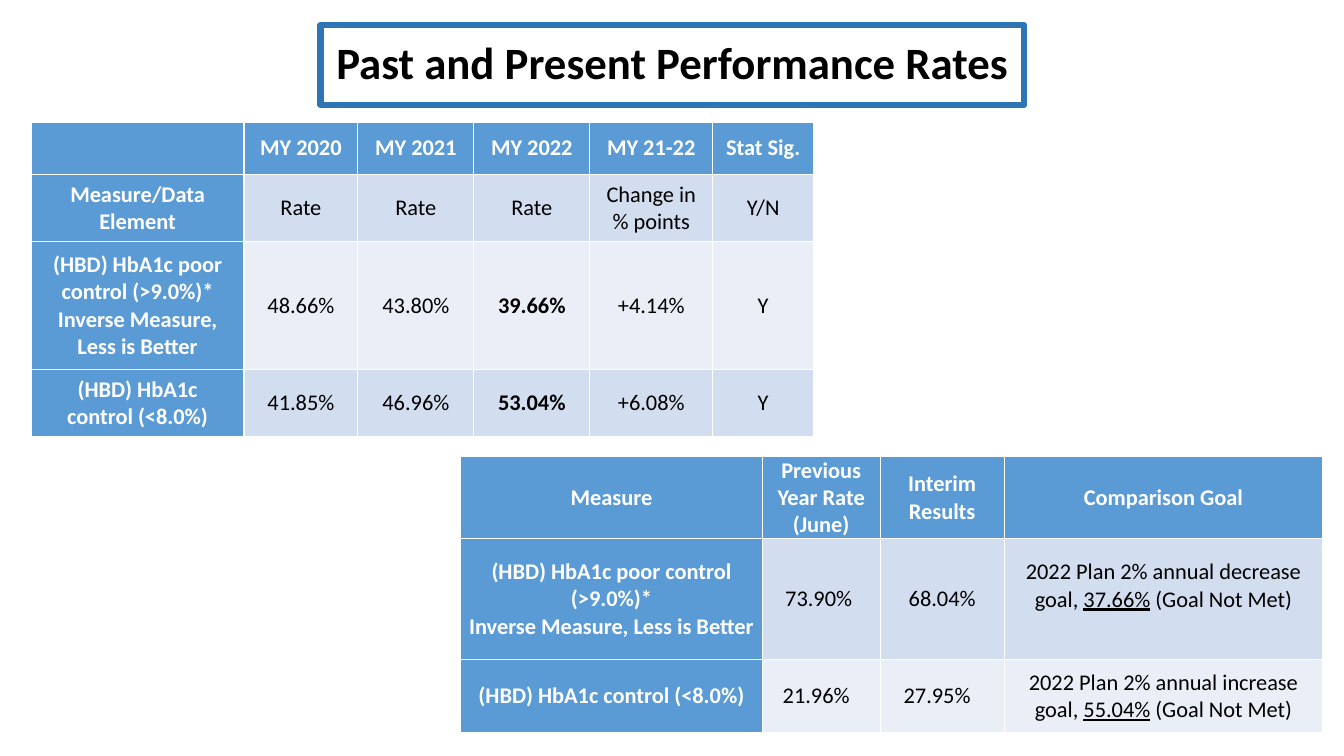
from pptx import Presentation
from pptx.dml.color import RGBColor
from pptx.enum.text import MSO_ANCHOR, MSO_AUTO_SIZE, PP_ALIGN
from pptx.util import Pt

PX = 9144  # 100 px to the inch
CENTER = PP_ALIGN.CENTER
MIDDLE = MSO_ANCHOR.MIDDLE
NO_AUTOFIT = MSO_AUTO_SIZE.NONE

FONT = "Calibri"
BLACK = RGBColor(0x00, 0x00, 0x00)
WHITE = RGBColor(0xFF, 0xFF, 0xFF)
FRAME_BLUE = RGBColor(0x2E, 0x75, 0xB6)
HEADER_BLUE = RGBColor(0x5B, 0x9B, 0xD5)
BANDS = (RGBColor(0xD2, 0xDE, 0xEF), RGBColor(0xEA, 0xEF, 0xF7))

# A cell is a text, or a list of (text, style) runs; "b" is bold, "u" underlined.
YEARLY_RATES = [
    ["", "MY 2020", "MY 2021", "MY 2022", "MY 21-22", "Stat Sig."],
    ["Measure/Data Element", "Rate", "Rate", "Rate", "Change in % points", "Y/N"],
    ["(HBD) HbA1c poor control (>9.0%)*\nInverse Measure, Less is Better",
     "48.66%", "43.80%", [("39.66%", "b")], "+4.14%", "Y"],
    ["(HBD) HbA1c control (<8.0%)",
     "41.85%", "46.96%", [("53.04%", "b")], "+6.08%", "Y"],
]
INTERIM_RESULTS = [
    ["Measure", "Previous Year Rate (June)", "Interim Results", "Comparison Goal"],
    ["(HBD) HbA1c poor control (>9.0%)*\nInverse Measure, Less is Better",
     "73.90%", "68.04%",
     [("2022 Plan 2% annual decrease goal, ", ""), ("37.66%", "u"),
      (" (Goal Not Met)", "")]],
    ["(HBD) HbA1c control (<8.0%)", "21.96%", "27.95%",
     [("2022 Plan 2% annual increase goal, ", ""), ("55.04%", "u"),
      (" (Goal Not Met)", "")]],
]


def add_run(paragraph, text, size, color, bold=False, underline=False):
    run = paragraph.add_run()
    run.text = text
    run.font.name = FONT
    run.font.size = Pt(size)
    run.font.color.rgb = color
    run.font.bold = bold
    run.font.underline = underline


def add_title(slide, left, top, width, height):
    title = slide.shapes.title
    title.left, title.top = left * PX, top * PX
    title.width, title.height = width * PX, height * PX
    title.line.color.rgb = FRAME_BLUE
    title.line.width = Pt(4.5)
    frame = title.text_frame
    frame.auto_size = NO_AUTOFIT
    frame.word_wrap = True
    frame.vertical_anchor = MIDDLE
    paragraph = frame.paragraphs[0]
    paragraph.alignment = CENTER
    paragraph.line_spacing = 0.9
    add_run(paragraph, "Past and Present Performance Rates", 32, BLACK, bold=True)


def fill_cell(cell, content, fill, color, is_header, side_margin):
    cell.fill.solid()
    cell.fill.fore_color.rgb = fill
    cell.vertical_anchor = MIDDLE
    cell.margin_left = cell.margin_right = side_margin * PX
    cell.margin_top = cell.margin_bottom = 0
    if isinstance(content, str):
        lines = [[(line, "")] for line in content.split("\n")]
    else:
        lines = [content]
    for index, runs in enumerate(lines):
        frame = cell.text_frame
        paragraph = frame.add_paragraph() if index else frame.paragraphs[0]
        paragraph.alignment = CENTER
        for text, style in runs:
            if text:
                add_run(paragraph, text, 16, color,
                        bold=is_header or style == "b", underline=style == "u")


def add_rate_table(slide, left, top, widths, heights, rows, side_margin):
    """Place a table whose first row and first column are headers."""
    table = slide.shapes.add_table(
        len(rows), len(widths), left * PX, top * PX,
        sum(widths) * PX, sum(heights) * PX).table
    table.first_col = True
    for column, width in zip(table.columns, widths):
        column.width = width * PX
    for row_index, contents in enumerate(rows):
        table.rows[row_index].height = heights[row_index] * PX
        for column_index, content in enumerate(contents):
            is_header = row_index == 0 or column_index == 0
            fill = HEADER_BLUE if is_header else BANDS[(row_index - 1) % 2]
            color = WHITE if is_header else BLACK
            fill_cell(table.cell(row_index, column_index), content, fill, color,
                      is_header, side_margin)
    return table


def main():
    presentation = Presentation()
    presentation.slide_width = 1333 * PX
    presentation.slide_height = 750 * PX
    slide = presentation.slides.add_slide(presentation.slide_layouts[5])

    add_title(slide, 318, 25, 698, 79)
    add_rate_table(slide, 31, 121, [211, 113, 115, 115, 122, 100],
                   [52, 67, 127, 66], YEARLY_RATES, side_margin=12)
    interim = add_rate_table(slide, 457, 453, [299, 117, 123, 316],
                             [81, 120, 72], INTERIM_RESULTS, side_margin=7)
    # The decrease goal sits half a line high; some rates sit left of centre.
    interim.cell(1, 3).margin_bottom = 27 * PX
    interim.cell(1, 1).margin_right = 12 * PX
    for column_index in (1, 2):
        interim.cell(2, column_index).margin_right = 17 * PX

    presentation.save("out.pptx")


if __name__ == "__main__":
    main()
